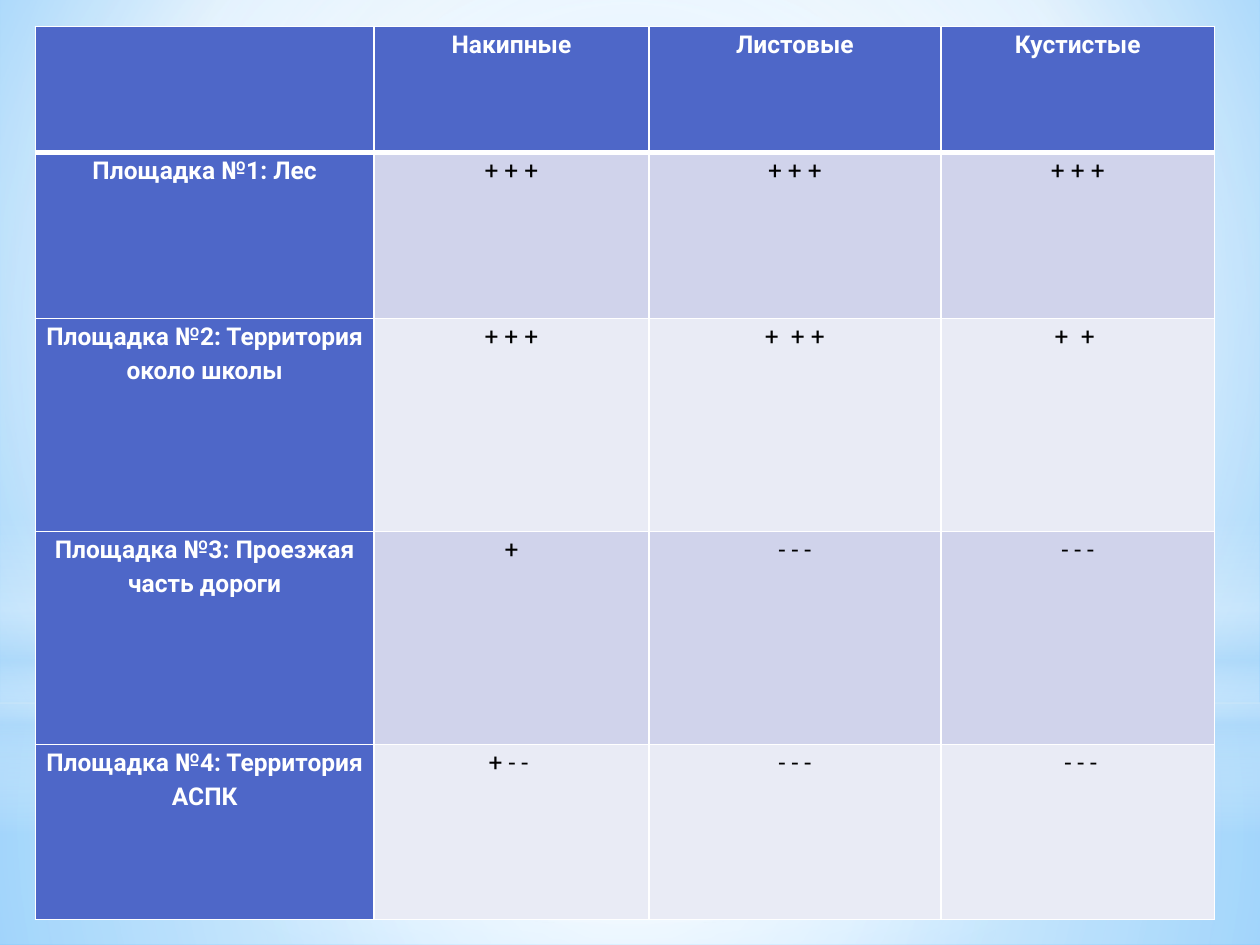
from lxml import etree
from pptx import Presentation
from pptx.dml.color import RGBColor
from pptx.enum.shapes import MSO_SHAPE
from pptx.enum.text import PP_ALIGN
from pptx.oxml.ns import qn
from pptx.util import Inches, Pt

RECTANGLE, OVAL = MSO_SHAPE.RECTANGLE, MSO_SHAPE.OVAL
CENTER = PP_ALIGN.CENTER

WIDTH, HEIGHT = 10, 7.5
FONT = "Roboto"
WHITE, BLACK, SKY = "FFFFFF", "000000", "B4DCFA"
HEADING_FILL = "4E67C8"
BAND_FILLS = ["D0D3EB", "E9EBF5"]
MIDDLE = (50, 50, 50, 50)

COLUMNS = [2.69, 2.18, 2.32, 2.17]
ROWS = [1, 1.32, 1.69, 1.69, 1.39]
LICHENS = [
    ["", "Накипные", "Листовые", "Кустистые"],
    ["Площадка №1: Лес", "+ + +", "+ + +", "+ + +"],
    ["Площадка №2: Территория около школы", "+ + +", "+  + +", "+  + "],
    ["Площадка №3: Проезжая часть дороги", "+", " - - - ", " - - - "],
    ["Площадка №4: Территория АСПК", "+ - - ", " - - - ", " - - -"],
]


def rgb(color):
    return RGBColor.from_string(color)


def add_color(parent, color, opacity=100):
    node = etree.SubElement(parent, qn("a:srgbClr"), val=color)
    if opacity < 100:
        etree.SubElement(node, qn("a:alpha"), val=str(opacity * 1000))


def set_gradient(fill, element, stops, focus=None):
    """Radial towards the focus insets (left, top, right, bottom), else top to bottom."""
    fill.gradient()
    gradient = next(element.iter(qn("a:gradFill")))
    for child in list(gradient):
        gradient.remove(child)
    stop_list = etree.SubElement(gradient, qn("a:gsLst"))
    for position, *color in stops:
        stop = etree.SubElement(stop_list, qn("a:gs"), pos=str(position * 1000))
        add_color(stop, *color)
    if focus:
        path = etree.SubElement(gradient, qn("a:path"), path="circle")
        insets = {side: str(share * 1000) for side, share in zip("ltrb", focus)}
        etree.SubElement(path, qn("a:fillToRect"), **insets)
    else:
        etree.SubElement(gradient, qn("a:lin"), ang="5400000", scaled="0")


def add_glow(slide, kind, top, height, stops, focus=None):
    shape = slide.shapes.add_shape(kind, 0, Inches(top), Inches(WIDTH), Inches(height))
    shape.shadow.inherit = False
    shape.line.fill.background()
    set_gradient(shape.fill, shape.element, stops, focus)


def draw_sky(slide):
    set_gradient(slide.background.fill, slide.element,
                 [(0, "9ED5FF"), (60, WHITE), (100, "5BB9FF")], (20, 10, 20, 60))
    horizon = 5.58
    add_glow(slide, RECTANGLE, horizon, HEIGHT - horizon,
             [(0, WHITE, 91), (37, WHITE, 76), (100, SKY, 79)], MIDDLE)
    add_glow(slide, RECTANGLE, 0, horizon,
             [(0, WHITE, 89), (48, WHITE, 62), (100, SKY, 79)], MIDDLE)
    add_glow(slide, RECTANGLE, 4.12, 2.5,
             [(0, WHITE, 0), (29, WHITE, 30), (45, SKY, 40),
              (55, WHITE, 26), (65, SKY, 60), (100, WHITE, 0)])
    add_glow(slide, OVAL, 1.75, horizon, [(0, WHITE), (56, WHITE, 0)], MIDDLE)


def set_borders(cell, top, bottom):
    properties = cell._tc.get_or_add_tcPr()
    widths = {"a:lnL": 1, "a:lnR": 1, "a:lnT": top, "a:lnB": bottom}
    for index, (tag, width) in enumerate(widths.items()):
        line = etree.Element(qn(tag), w=str(Pt(width)))
        add_color(etree.SubElement(line, qn("a:solidFill")), WHITE)
        properties.insert(index, line)


def fill_cell(cell, text, row, column):
    heading = row == 0 or column == 0
    cell.fill.solid()
    cell.fill.fore_color.rgb = rgb(HEADING_FILL if heading else BAND_FILLS[(row - 1) % 2])
    cell.margin_left = cell.margin_right = Inches(0.07)
    cell.margin_top = cell.margin_bottom = 0
    cell.text = text
    paragraph = cell.text_frame.paragraphs[0]
    paragraph.alignment = CENTER
    paragraph.line_spacing = 1.15
    font = paragraph.font
    font.name, font.size, font.bold = FONT, Pt(14), heading
    font.color.rgb = rgb(WHITE if heading else BLACK)
    set_borders(cell, top=3 if row == 1 else 1, bottom=3 if row == 0 else 1)


def add_lichen_table(slide, left, top):
    frame = slide.shapes.add_table(len(ROWS), len(COLUMNS), Inches(left), Inches(top),
                                   Inches(sum(COLUMNS)), Inches(sum(ROWS)))
    table = frame.table
    table.first_col = True
    for column, width in zip(table.columns, COLUMNS):
        column.width = Inches(width)
    for row, height in zip(table.rows, ROWS):
        row.height = Inches(height)
    for row, texts in enumerate(LICHENS):
        for column, text in enumerate(texts):
            fill_cell(table.cell(row, column), text, row, column)


def main():
    presentation = Presentation()
    presentation.slide_width = Inches(WIDTH)
    presentation.slide_height = Inches(HEIGHT)
    slide = presentation.slides.add_slide(presentation.slide_layouts[6])
    draw_sky(slide)
    add_lichen_table(slide, left=0.28, top=0.21)
    presentation.save("out.pptx")


if __name__ == "__main__":
    main()
